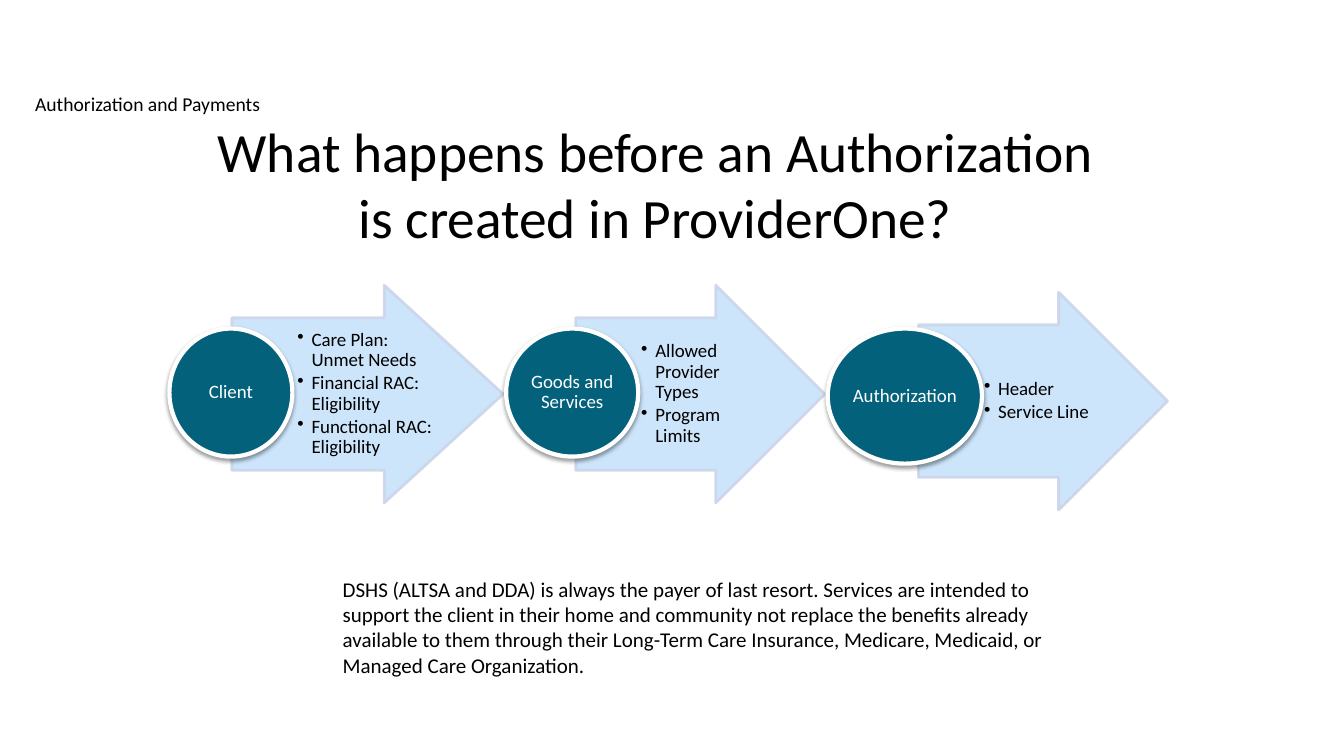
import pptx
import pptx.util
import pptx.dml.color
import pptx.enum.shapes
import pptx.enum.text
import pptx.oxml
import pptx.oxml.ns
import lxml.etree

Inches, Pt = pptx.util.Inches, pptx.util.Pt
SHAPE = pptx.enum.shapes.MSO_SHAPE
ALIGN = pptx.enum.text.PP_ALIGN
ANCHOR = pptx.enum.text.MSO_ANCHOR
FIT = pptx.enum.text.MSO_AUTO_SIZE

# Each step: label, bullets, circle box, arrow left, top, width, head length
STEPS = [
    ("Client",
     ["Care Plan: Unmet Needs", "Financial RAC: Eligibility",
      "Functional RAC: Eligibility"],
     (1.68, 3.26, 1.22, 1.27), (2.3, 2.83, 2.69, 1.18)),
    ("Goods and Services",
     ["Allowed Provider Types", "Program Limits"],
     (5.02, 3.26, 1.31, 1.27), (5.71, 2.83, 2.47, 1.08)),
    ("Authorization",
     ["Header", "Service Line"],
     (8.21, 3.26, 1.53, 1.34), (9.11, 2.9, 2.47, 1.08)),
]
# Each text: wording, box, type size, alignment, frame format
TEXTS = [
    ("DSHS (ALTSA and DDA) is always the payer of last resort. Services are "
     "intended to support the client in their home and community not replace "
     "the benefits already available to them through their Long-Term Care "
     "Insurance, Medicare, Medicaid, or Managed Care Organization.",
     (3.3, 5.67, 7.25, 1.11), "note", ALIGN.LEFT,
     {"word_wrap": True, "auto_size": FIT.SHAPE_TO_FIT_TEXT}),
    ("What happens before an Authorization is created in ProviderOne?",
     (2, 1.35, 9, 0.94), "title", ALIGN.CENTER,
     {"word_wrap": True, "vertical_anchor": ANCHOR.MIDDLE}),
    ("Authorization and Payments",
     (0.25, 0.86, 2.46, 0.34), "topic", ALIGN.LEFT,
     {"word_wrap": False, "auto_size": FIT.SHAPE_TO_FIT_TEXT}),
]
THEME = {
    "font": "Calibri",
    "size": {"title": 39.6, "note": 15, "topic": 14, "step": 13.5},
    "ink": "000000", "light": "FFFFFF",
    "arrow": "C8E3FB", "edge": "CCD5EA", "circle": "04617B",
}
TALL = 2.16     # arrow height
SHAFT = 0.7     # shaft share of the arrow height
LEFT, RIGHT = 0.65, 0.67    # text gaps from arrow tail and tip
HANG = 0.14     # bullet indent


def color(name):
    return pptx.dml.color.RGBColor.from_string(THEME[name])


def apply(item, form):
    for key, value in form.items():
        setattr(item, key, value)


def write(frame, lines, size, ink, form, para, bullet=False):
    apply(frame, form)
    for i, line in enumerate(lines):
        p = frame.paragraphs[0] if i == 0 else frame.add_paragraph()
        p.text = line
        if bullet:
            props = p._p.get_or_add_pPr()
            props.set("marL", str(Inches(HANG)))
            props.set("indent", str(-Inches(HANG)))
            mark = lxml.etree.SubElement(props, pptx.oxml.ns.qn("a:buChar"))
            mark.set("char", "•")
        apply(p, para)
        apply(p.font, {"name": THEME["font"], "size": Pt(THEME["size"][size])})
        p.font.color.rgb = color(ink)


def draw(kind, box, fill, edge, width):
    shape = slide.shapes.add_shape(kind, *map(Inches, box))
    shape.shadow.inherit = False
    shape.fill.solid()
    shape.fill.fore_color.rgb = color(fill)
    shape.line.color.rgb = color(edge)
    shape.line.width = Pt(width)
    return shape


def fade(shape):
    """Make fill and line 90 % opaque."""
    for tone in shape._element.spPr.iter(pptx.oxml.ns.qn("a:srgbClr")):
        lxml.etree.SubElement(tone, pptx.oxml.ns.qn("a:alpha")).set("val", "90000")


def shade(shape):
    """Give the shape a soft shadow straight below it."""
    effects = shape._element.spPr.find(pptx.oxml.ns.qn("a:effectLst"))
    effects.append(pptx.oxml.parse_xml(
        f'<a:outerShdw {pptx.oxml.ns.nsdecls("a")} blurRad="{Pt(3.1)}" '
        f'dist="{Pt(1.6)}" dir="5400000" rotWithShape="0">'
        f'<a:srgbClr val="{THEME["ink"]}"><a:alpha val="38000"/></a:srgbClr>'
        '</a:outerShdw>'))


def inset(left=0, right=0):
    return {"margin_left": Inches(left), "margin_right": Inches(right),
            "margin_top": 0, "margin_bottom": 0, "word_wrap": True,
            "vertical_anchor": ANCHOR.MIDDLE}


deck = pptx.Presentation()
apply(deck, {"slide_width": Inches(13.33), "slide_height": Inches(7.5)})
slide = deck.slides.add_slide(deck.slide_layouts[6])

for label, points, ring, (x, y, wide, head) in STEPS:
    arrow = draw(SHAPE.RIGHT_ARROW, (x, y, wide, TALL), "arrow", "edge", 2)
    arrow.adjustments[0] = SHAFT
    arrow.adjustments[1] = head / TALL
    fade(arrow)
    # The preset's text area already stops SHAFT * head before the tip
    write(arrow.text_frame, points, "step", "ink",
          inset(LEFT, RIGHT - SHAFT * head),
          {"alignment": ALIGN.LEFT, "level": 1, "line_spacing": 0.9,
           "space_after": Pt(2)}, bullet=True)

    circle = draw(SHAPE.OVAL, ring, "circle", "light", 3)
    shade(circle)
    write(circle.text_frame, [label], "step", "light", inset(),
          {"alignment": ALIGN.CENTER, "line_spacing": 0.9})

for words, box, size, align, form in TEXTS:
    area = slide.shapes.add_textbox(*map(Inches, box))
    write(area.text_frame, [words], size, "ink", form, {"alignment": align})

deck.save("out.pptx")
